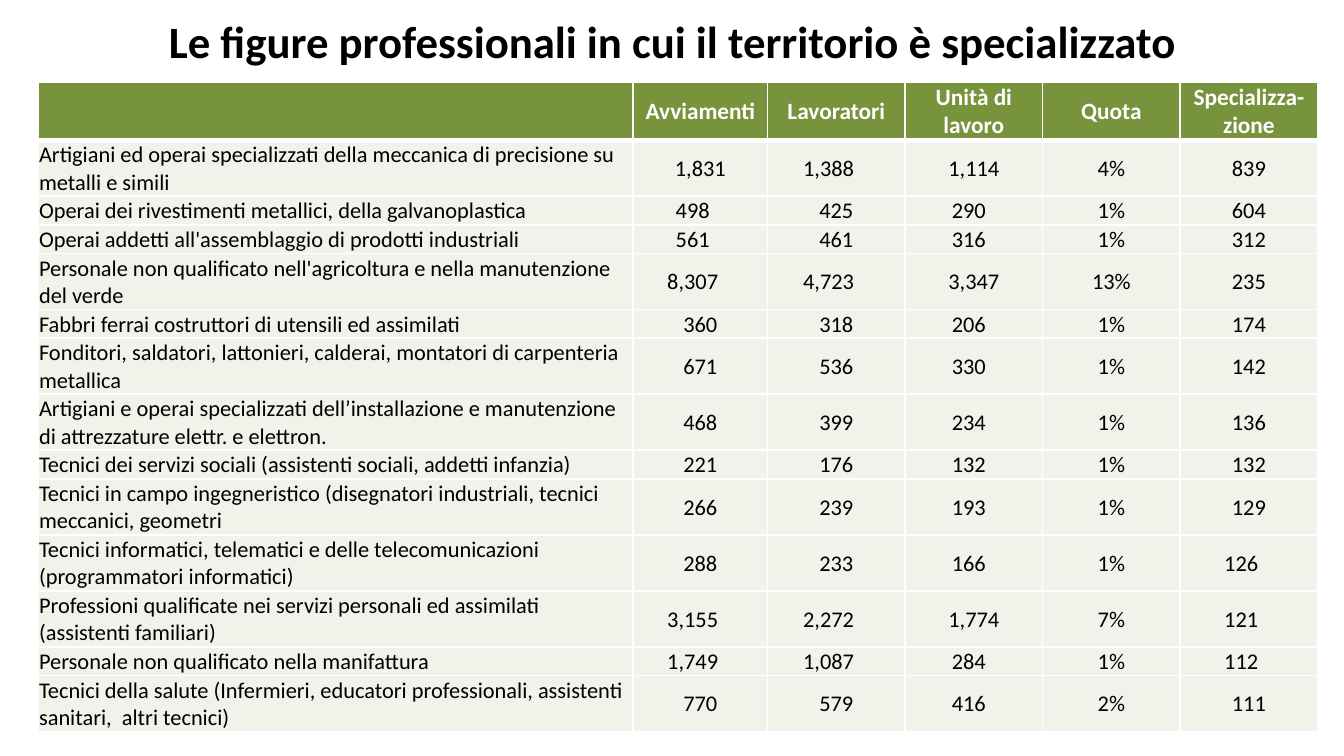
from lxml import etree
from pptx import Presentation
from pptx.dml.color import RGBColor
from pptx.enum.text import MSO_ANCHOR as Anchor, MSO_AUTO_SIZE as AutoSize, PP_ALIGN as Align
from pptx.oxml.ns import qn
from pptx.util import Pt

BLACK = RGBColor(0, 0, 0)
WHITE = RGBColor(255, 255, 255)
GREEN = RGBColor(0x77, 0x93, 0x3C)
PALE_GREEN = RGBColor(0xEF, 0xF3, 0xEA)

TITLE = "Le figure professionali in cui il territorio è specializzato"
COLUMN_WIDTHS = [319, 72] + [73.7] * 4
HEADER_HEIGHT, ONE_LINE, TWO_LINES = 30.5, 15.1, 29.7
LINE_CAPACITY = 64  # characters of a job name that fit on one line

HEADERS = ["", "Avviamenti", "Lavoratori", "Unità di lavoro", "Quota", "Specializza-zione"]
JOBS = [
    ["Artigiani ed operai specializzati della meccanica di precisione su metalli e simili",
     "1,831", "1,388", "1,114", "4%", "839"],
    ["Operai dei rivestimenti metallici, della galvanoplastica",
     "498", "425", "290", "1%", "604"],
    ["Operai addetti all'assemblaggio di prodotti industriali",
     "561", "461", "316", "1%", "312"],
    ["Personale non qualificato nell'agricoltura e nella manutenzione del verde",
     "8,307", "4,723", "3,347", "13%", "235"],
    ["Fabbri ferrai costruttori di utensili ed assimilati",
     "360", "318", "206", "1%", "174"],
    ["Fonditori, saldatori, lattonieri, calderai, montatori di carpenteria metallica",
     "671", "536", "330", "1%", "142"],
    ["Artigiani e operai specializzati dell’installazione e manutenzione "
     "di attrezzature elettr. e elettron.",
     "468", "399", "234", "1%", "136"],
    ["Tecnici dei servizi sociali (assistenti sociali, addetti infanzia)",
     "221", "176", "132", "1%", "132"],
    ["Tecnici in campo ingegneristico (disegnatori industriali, tecnici meccanici, geometri",
     "266", "239", "193", "1%", "129"],
    ["Tecnici informatici, telematici e delle telecomunicazioni (programmatori informatici)",
     "288", "233", "166", "1%", "126"],
    ["Professioni qualificate nei servizi personali ed assimilati (assistenti familiari)",
     "3,155", "2,272", "1,774", "7%", "121"],
    ["Personale non qualificato nella manifattura",
     "1,749", "1,087", "284", "1%", "112"],
    ["Tecnici della salute (Infermieri, educatori professionali, assistenti "
     "sanitari,  altri tecnici)",
     "770", "579", "416", "2%", "111"],
]
# Values set a little left of the middle of their column
SHIFTED = {
    1: {"498", "561", "8,307", "3,155", "1,749"},
    2: {"1,388", "4,723", "2,272", "1,087"},
    3: {"290", "316", "206", "330", "234", "132", "193", "166", "284", "416"},
    5: {"126", "121", "112"},
}
SHIFT_INSETS = {1: 8.2, 2: 8.2, 3: 5.4, 5: 8.2}


class SlideBuilder:
    font_name = "Calibri"
    inset = 0.72

    def __init__(self, slide):
        self.slide = slide

    def format_text(self, text_frame, size, color, bold, align):
        for paragraph in text_frame.paragraphs:
            paragraph.alignment = align
            for run in paragraph.runs:
                run.font.name = self.font_name
                run.font.size = Pt(size)
                run.font.bold = bold
                run.font.color.rgb = color

    def title(self, text, left, top, width, height):
        shape = self.slide.shapes.title
        shape.left, shape.top, shape.width, shape.height = map(Pt, (left, top, width, height))
        text_frame = shape.text_frame
        text_frame.text = text
        text_frame.word_wrap = True
        text_frame.auto_size = AutoSize.NONE
        text_frame.vertical_anchor = Anchor.MIDDLE
        text_frame.margin_top = text_frame.margin_bottom = 0
        self.format_text(text_frame, 24, BLACK, True, Align.CENTER)

    def borders(self, cell, top, bottom):
        """Draw white borders; must come before the fill of the cell."""
        properties = cell._tc.get_or_add_tcPr()
        for tag, width in (("lnL", 1), ("lnR", 1), ("lnT", top), ("lnB", bottom)):
            line = etree.SubElement(properties, qn(f"a:{tag}"), w=str(Pt(width)))
            fill = etree.SubElement(line, qn("a:solidFill"))
            etree.SubElement(fill, qn("a:srgbClr"), val=str(WHITE))

    def cell(self, cell, text, fill, size, color, bold, align, right_inset=0.0):
        cell.text = text
        cell.vertical_anchor = Anchor.MIDDLE
        cell.margin_left = cell.margin_top = Pt(self.inset)
        cell.margin_right = Pt(self.inset + right_inset)
        cell.margin_bottom = 0
        cell.fill.solid()
        cell.fill.fore_color.rgb = fill
        self.format_text(cell.text_frame, size, color, bold, align)

    def table(self, headers, rows, left, top, widths, heights):
        frame = self.slide.shapes.add_table(
            len(rows) + 1, len(headers), Pt(left), Pt(top), Pt(sum(widths)), Pt(sum(heights)))
        table = frame.table
        table.horz_banding = False
        for column, width in zip(table.columns, widths):
            column.width = Pt(width)
        for row, height in zip(table.rows, heights):
            row.height = Pt(height)
        for column, text in enumerate(headers):
            cell = table.cell(0, column)
            self.borders(cell, 1, 3)
            self.cell(cell, text, GREEN, 12.5, WHITE, True, Align.CENTER)
        for number, values in enumerate(rows, start=1):
            for column, text in enumerate(values):
                cell = table.cell(number, column)
                self.borders(cell, 3 if number == 1 else 1, 1)
                align = Align.CENTER if column else Align.LEFT
                shifted = text in SHIFTED.get(column, ())
                self.cell(cell, text, PALE_GREEN, 12, BLACK, False, align,
                          SHIFT_INSETS[column] if shifted else 0)


def main():
    presentation = Presentation()
    presentation.slide_width, presentation.slide_height = Pt(720), Pt(405)
    slide = presentation.slides.add_slide(presentation.slide_layouts[5])
    builder = SlideBuilder(slide)
    builder.title(TITLE, 8.6, 5.8, 703.4, 32.4)
    heights = [HEADER_HEIGHT] + [
        TWO_LINES if len(job[0]) > LINE_CAPACITY + 2 else ONE_LINE for job in JOBS]
    builder.table(HEADERS, JOBS, 20.2, 43.9, COLUMN_WIDTHS, heights)
    presentation.save("out.pptx")


if __name__ == "__main__":
    main()
